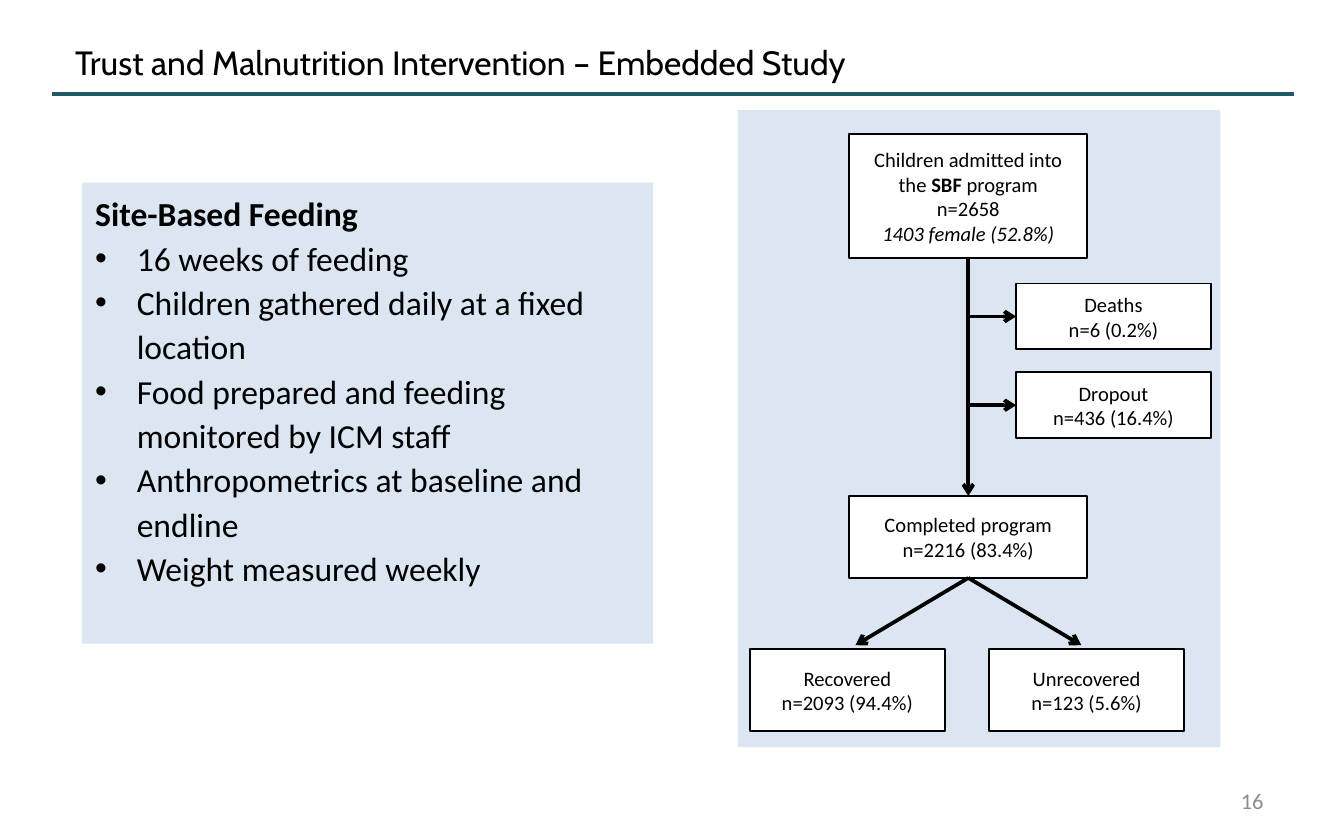
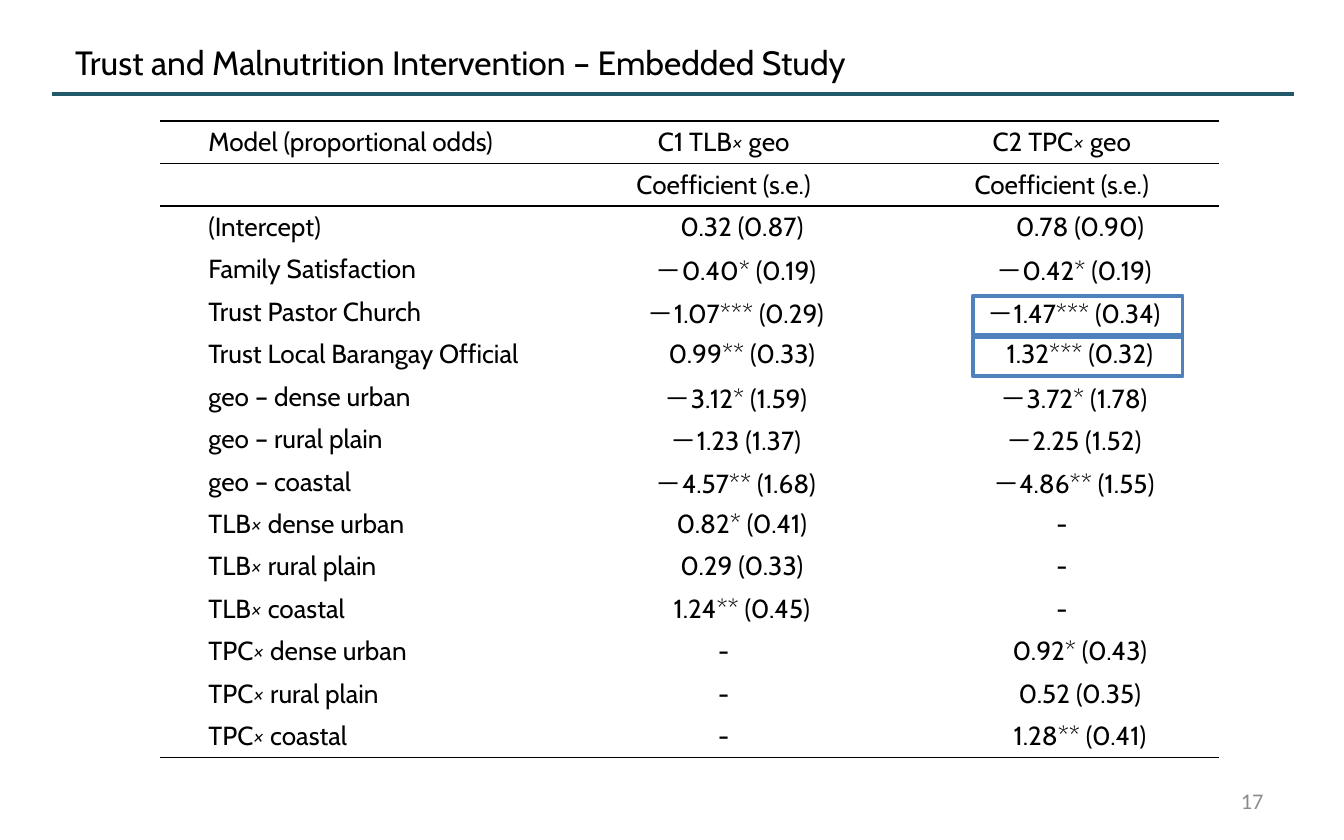
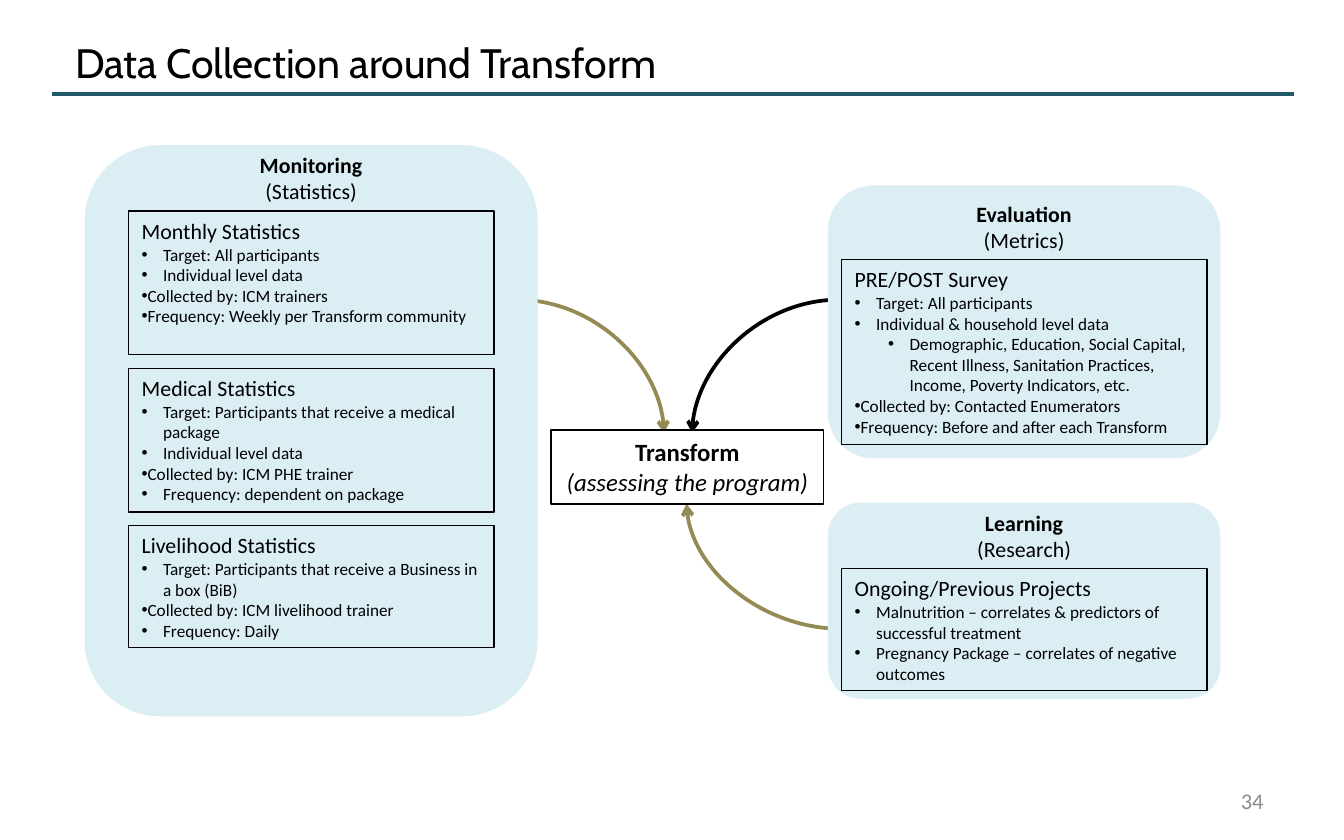
from dataclasses import dataclass

from lxml.etree import SubElement
from pptx import Presentation
from pptx.dml.color import RGBColor
from pptx.enum.shapes import MSO_CONNECTOR, MSO_SHAPE
from pptx.enum.text import MSO_ANCHOR, PP_ALIGN
from pptx.oxml.ns import qn
from pptx.util import Inches, Pt

BLACK = RGBColor(0x00, 0x00, 0x00)
WHITE = RGBColor(0xFF, 0xFF, 0xFF)
TEAL = RGBColor(0x21, 0x59, 0x68)
GREY = RGBColor(0x8C, 0x8C, 0x8C)
PALE_BLUE = RGBColor(0xDC, 0xE6, 0xF2)
PALE_AQUA = RGBColor(0xDB, 0xEE, 0xF4)
OLIVE = RGBColor(0x94, 0x8A, 0x54)
HIGHLIGHT = RGBColor(0x4F, 0x81, 0xBD)

HEADING_FONT = "Cabin"
BODY_FONT = "Calibri"
NO_TABLE_STYLE = "{2D5ABB26-0587-4C30-8999-92F81FD0307C}"
TOP, LEFT, BOTTOM = 0, 1, 2
HANGING, FLUSH, NESTED = 0.16, 0, 0.41

STUDY_TITLE = "Trust and Malnutrition Intervention – Embedded Study"
FEEDING_POINTS = [
    "16 weeks of feeding",
    "Children gathered daily at a fixed location",
    "Food prepared and feeding monitored by ICM staff",
    "Anthropometrics at baseline and endline",
    "Weight measured weekly",
]
MODEL_ROWS = [
    ("Model (proportional odds)", "C1 TLB× geo", "C2 TPC× geo"),
    ("", "Coefficient (s.e.)", "Coefficient (s.e.)"),
    ("(Intercept)", "0.32 (0.87)", "0.78 (0.90)"),
    ("Family Satisfaction", "－0.40* (0.19)", "－0.42* (0.19)"),
    ("Trust Pastor Church", "－1.07*** (0.29)", "－1.47*** (0.34)"),
    ("Trust Local Barangay Official", "0.99** (0.33)", "1.32*** (0.32)"),
    ("geo – dense urban", "－3.12* (1.59)", "－3.72* (1.78)"),
    ("geo – rural plain", "－1.23 (1.37)", "－2.25 (1.52)"),
    ("geo – coastal", "－4.57** (1.68)", "－4.86** (1.55)"),
    ("TLB× dense urban", "0.82* (0.41)", "-"),
    ("TLB× rural plain", "0.29 (0.33)", "-"),
    ("TLB× coastal", "1.24** (0.45)", "-"),
    ("TPC× dense urban", "-", "0.92* (0.43)"),
    ("TPC× rural plain", "-", "0.52 (0.35)"),
    ("TPC× coastal", "-", "1.28** (0.41)"),
]
MONITORING_CARDS = [
    ("Monthly Statistics", 1.07, [
        (HANGING, "Target: All participants"),
        (HANGING, "Individual level data"),
        (FLUSH, "Collected by: ICM trainers"),
        (FLUSH, "Frequency: Weekly per Transform community"),
    ]),
    ("Medical Statistics", 1.07, [
        (HANGING, "Target: Participants that receive a medical package"),
        (HANGING, "Individual level data"),
        (FLUSH, "Collected by: ICM PHE trainer"),
        (HANGING, "Frequency: dependent on package"),
    ]),
    ("Livelihood Statistics", 0.91, [
        (HANGING, "Target: Participants that receive a Business in a box (BiB)"),
        (FLUSH, "Collected by: ICM livelihood trainer"),
        (HANGING, "Frequency: Daily"),
    ]),
]
EVALUATION_CARDS = [
    ("PRE/POST Survey", 1.38, [
        (HANGING, "Target: All participants"),
        (HANGING, "Individual & household level data"),
        (NESTED, "Demographic, Education, Social Capital, Recent Illness, "
                 "Sanitation Practices, Income, Poverty Indicators, etc."),
        (FLUSH, "Collected by: Contacted Enumerators"),
        (FLUSH, "Frequency: Before and after each Transform"),
    ]),
]
LEARNING_CARDS = [
    ("Ongoing/Previous Projects", 0.91, [
        (HANGING, "Malnutrition – correlates & predictors of successful treatment"),
        (HANGING, "Pregnancy Package – correlates of negative outcomes"),
    ]),
]


@dataclass
class Box:
    left: float
    top: float
    width: float
    height: float

    def inner(self, dx, dy, width, height):
        return Box(self.left + dx, self.top + dy, width, height)

    def inches(self):
        return [Inches(v) for v in (self.left, self.top, self.width, self.height)]


def style_runs(paragraph, size, font=BODY_FONT, color=BLACK, bold=False, italic=False):
    for run in paragraph.runs:
        run.font.size = Pt(size)
        run.font.name = font
        run.font.color.rgb = color
        run.font.bold = bold
        run.font.italic = italic


def indent(paragraph, margin, first_line, bullet=False):
    properties = paragraph._p.get_or_add_pPr()
    properties.set("marL", str(Inches(margin)))
    properties.set("indent", str(Inches(first_line)))
    if bullet:
        SubElement(properties, qn("a:buFont")).set("typeface", "Arial")
        SubElement(properties, qn("a:buChar")).set("char", "•")


def write_lines(frame, lines, size, align=PP_ALIGN.LEFT, anchor=MSO_ANCHOR.TOP, wrap=True):
    frame.text = "\n".join(lines)
    frame.word_wrap = wrap
    frame.vertical_anchor = anchor
    for paragraph in frame.paragraphs:
        paragraph.alignment = align
        style_runs(paragraph, size)
    return frame.paragraphs


def add_block(slide, box, fill=None, line=None, line_width=1.0, preset=MSO_SHAPE.RECTANGLE):
    block = slide.shapes.add_shape(preset, *box.inches())
    block.shadow.inherit = False
    if fill is None:
        block.fill.background()
    else:
        block.fill.solid()
        block.fill.fore_color.rgb = fill
    if line is None:
        block.line.fill.background()
    else:
        block.line.color.rgb = line
        block.line.width = Pt(line_width)
    return block


def add_line(slide, start, end, color=BLACK, arrow=True, curved=False):
    kind = MSO_CONNECTOR.CURVE if curved else MSO_CONNECTOR.STRAIGHT
    connector = slide.shapes.add_connector(kind, *[Inches(v) for v in (*start, *end)])
    connector.line.color.rgb = color
    connector.line.width = Pt(2)
    properties = connector._element.spPr
    if curved:
        properties.find(qn("a:prstGeom")).set("prst", "curvedConnector2")
    if arrow:
        SubElement(connector.line._get_or_add_ln(), qn("a:tailEnd")).set("type", "arrow")
    SubElement(properties, qn("a:effectLst"))
    return connector


def add_base_slide(prs, title, number, title_size=18):
    slide = prs.slides.add_slide(prs.slide_layouts[6])
    add_line(slide, (0.39, 0.7), (9.63, 0.7), TEAL, arrow=False)
    heading = slide.shapes.add_textbox(*Box(0.46, 0.24, 7.78, 0.45).inches())
    paragraph = write_lines(heading.text_frame, [title], title_size, anchor=MSO_ANCHOR.MIDDLE)[0]
    style_runs(paragraph, title_size, HEADING_FONT)
    footer = slide.shapes.add_textbox(*Box(7.17, 5.79, 2.33, 0.33).inches())
    paragraph = write_lines(footer.text_frame, [number], 12, PP_ALIGN.RIGHT, MSO_ANCHOR.MIDDLE)[0]
    style_runs(paragraph, 12, color=GREY)
    return slide


def add_feeding_summary(slide, box):
    summary = add_block(slide, box, PALE_BLUE)
    heading, *points = write_lines(summary.text_frame, ["Site-Based Feeding", *FEEDING_POINTS], 18)
    heading.line_spacing = 1.1
    style_runs(heading, 18, bold=True)
    for point in points:
        point.line_spacing = 1.1
        indent(point, 0.31, -0.31, bullet=True)


def add_flow_step(slide, box, lines):
    step = add_block(slide, box, WHITE, BLACK)
    write_lines(step.text_frame, lines, 11, PP_ALIGN.CENTER, MSO_ANCHOR.MIDDLE)
    return step


def add_participant_flow(slide, box):
    add_block(slide, box, PALE_BLUE)
    admitted_box = box.inner(0.83, 0.18, 1.77, 0.92)
    completed_box = box.inner(0.83, 2.87, 1.77, 0.61)
    axis = admitted_box.left + admitted_box.width / 2
    admitted_end = admitted_box.top + admitted_box.height
    completed_end = completed_box.top + completed_box.height

    admitted = add_flow_step(slide, admitted_box, ["", "n=2658", "1403 female (52.8%)"])
    intro, _, females = admitted.text_frame.paragraphs
    for text, bold in (("Children admitted into the ", False), ("SBF", True), (" program", False)):
        intro.add_run().text = text
        style_runs(intro, 11)
    intro.runs[1].font.bold = True
    style_runs(females, 11, italic=True)

    completed = add_flow_step(slide, completed_box, ["Completed program", "n=2216 (83.4%)"])
    trunk = add_line(slide, (axis, admitted_end), (axis, completed_box.top))
    trunk.begin_connect(admitted, BOTTOM)
    trunk.end_connect(completed, TOP)

    outcomes = [(0.09, -0.84, ["Recovered", "n=2093 (94.4%)"]),
                (1.87, 0.84, ["Unrecovered", "n=123 (5.6%)"])]
    for dx, reach, lines in outcomes:
        add_flow_step(slide, box.inner(dx, 4.01, 1.45, 0.61), lines)
        branch = add_line(slide, (axis, completed_end), (axis + reach, box.top + 3.98))
        branch.begin_connect(completed, BOTTOM)

    exits = [["Deaths", "n=6 (0.2%)"], ["Dropout", "n=436 (16.4%)"]]
    for i, lines in enumerate(exits):
        exit_box = box.inner(2.07, 1.29 + 0.66 * i, 1.45, 0.49)
        exit_step = add_flow_step(slide, exit_box, lines)
        middle = exit_box.top + exit_box.height / 2
        add_line(slide, (axis, middle), (exit_box.left, middle)).end_connect(exit_step, LEFT)


def add_cell_border(cell, edge):
    line = SubElement(cell._tc.get_or_add_tcPr(), qn(edge), w=str(Pt(1)))
    fill = SubElement(line, qn("a:solidFill"))
    SubElement(fill, qn("a:srgbClr")).set("val", str(BLACK))


def write_model_cell(cell, text, is_label, is_header):
    cell.margin_left = cell.margin_right = Inches(0.07)
    cell.margin_top = cell.margin_bottom = 0
    cell.vertical_anchor = MSO_ANCHOR.MIDDLE
    paragraph = cell.text_frame.paragraphs[0]
    first_line = 0.29
    if not is_label:
        paragraph.alignment = PP_ALIGN.CENTER
        if text.startswith("－"):
            first_line += 0.18
        elif not is_header and text != "-":
            first_line += 0.27
    indent(paragraph, 0, first_line)
    for part in text.partition("×"):
        if part:
            paragraph.add_run().text = part
    style_runs(paragraph, 14, HEADING_FONT)
    for run in paragraph.runs:
        run.font.italic = run.text == "×"


def add_model_table(slide, box):
    frame = slide.shapes.add_table(len(MODEL_ROWS), 3, *box.inches())
    table = frame.table
    table.first_row = table.horz_banding = False
    table._tbl.tblPr.find(qn("a:tableStyleId")).text = NO_TABLE_STYLE
    for column, width in zip(table.columns, (2.85, 2.4, 2.63)):
        column.width = Inches(width)
    ruled_rows = (0, 1, len(MODEL_ROWS) - 1)
    for r, texts in enumerate(MODEL_ROWS):
        table.rows[r].height = Inches(box.height / len(MODEL_ROWS))
        for c, text in enumerate(texts):
            cell = table.cell(r, c)
            write_model_cell(cell, text, c == 0, r < 2)
            if r == 0:
                add_cell_border(cell, "a:lnT")
            if r in ruled_rows:
                add_cell_border(cell, "a:lnB")
            cell.fill.background()
    for i in range(2):
        add_block(slide, box.inner(6.05, 1.3 + 0.31 * i, 1.56, 0.29), line=HIGHLIGHT, line_width=2)


def add_card(slide, box, heading, points):
    card = add_block(slide, box, line=BLACK, line_width=0.75)
    texts = [text for _, text in points]
    paragraphs = write_lines(card.text_frame, [heading, *texts], 9.2)
    style_runs(paragraphs[0], 11.7)
    for paragraph, (margin, _) in zip(paragraphs[1:], points):
        if margin == NESTED:
            paragraph.level = 1
        indent(paragraph, margin, -0.16, bullet=True)


def add_data_panel(slide, box, name, kind, cards, label_top=0.0):
    add_block(slide, box, PALE_AQUA, preset=MSO_SHAPE.ROUNDED_RECTANGLE)
    label_box = box.inner((box.width - 1) / 2, label_top, 1, 0.49)
    label = slide.shapes.add_textbox(*label_box.inches())
    lines = write_lines(label.text_frame, [name, kind], 11.7, PP_ALIGN.CENTER, wrap=False)
    style_runs(lines[0], 11.7, bold=True)
    card_width, gap = 2.72, 0.1
    card_top = label_top + label_box.height
    for heading, height, points in cards:
        card_box = box.inner((box.width - card_width) / 2, card_top, card_width, height)
        add_card(slide, card_box, heading, points)
        card_top += height + gap


def add_transform_hub(slide, box):
    bottom = box.top + box.height
    add_line(slide, (6.27, 4.68), (box.left + 1.01, bottom), OLIVE, curved=True)
    add_line(slide, (6.24, 2.23), (box.left + 1.05, box.top + 0.02), BLACK, curved=True)
    add_line(slide, (3.85, 2.23), (box.left + 0.84, box.top + 0.02), OLIVE, curved=True)
    hub = add_block(slide, box, WHITE, BLACK, 0.75)
    name, purpose = write_lines(hub.text_frame, ["Transform", "(assessing the program)"],
                                13.3, PP_ALIGN.CENTER, wrap=False)
    style_runs(name, 13.3, bold=True)
    style_runs(purpose, 13.3, italic=True)


def main():
    prs = Presentation()
    prs.slide_width, prs.slide_height = Inches(10), Inches(6.25)

    feeding = add_base_slide(prs, STUDY_TITLE, "16")
    add_feeding_summary(feeding, Box(0.61, 1.36, 4.25, 3.43))
    add_participant_flow(feeding, Box(5.49, 0.82, 3.59, 4.74))

    model = add_base_slide(prs, STUDY_TITLE, "17")
    add_model_table(model, Box(1.19, 0.9, 7.88, 4.74))

    collection = add_base_slide(prs, "Data Collection around Transform", "34", 22)
    add_transform_hub(collection, Box(4.1, 3.2, 2.03, 0.55))
    add_data_panel(collection, Box(0.63, 1.08, 3.37, 4.25),
                   "Monitoring", "(Statistics)", MONITORING_CARDS)
    add_data_panel(collection, Box(6.16, 1.38, 2.92, 2.03),
                   "Evaluation", "(Metrics)", EVALUATION_CARDS, label_top=0.06)
    add_data_panel(collection, Box(6.16, 3.74, 2.92, 1.46),
                   "Learning", "(Research)", LEARNING_CARDS)

    prs.save("out.pptx")


if __name__ == "__main__":
    main()
